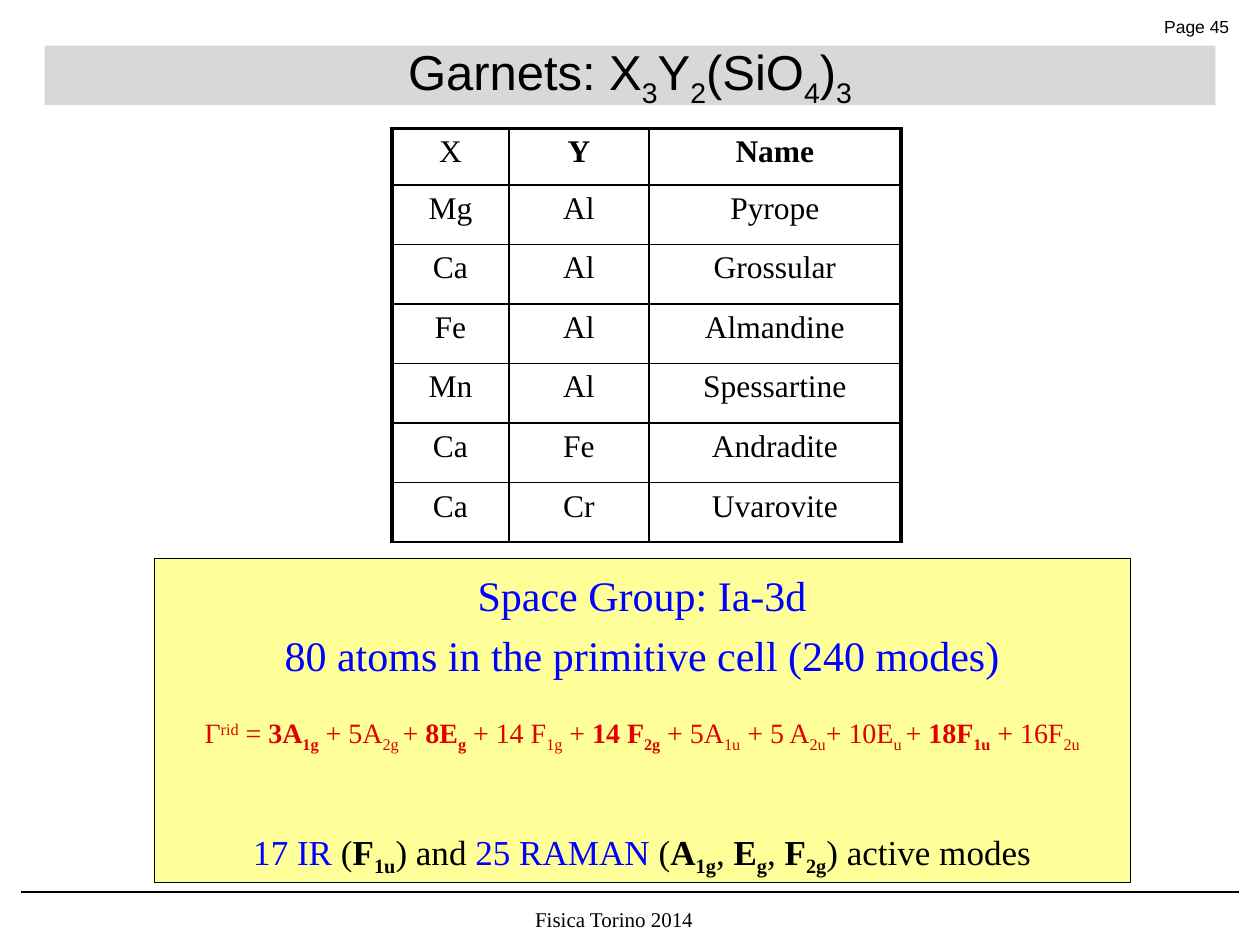
from lxml import etree
from pptx import Presentation
from pptx import util as u
from pptx.dml.color import RGBColor
from pptx.enum import shapes, text
from pptx.oxml.ns import qn

SERIF, SANS = "Times New Roman", "Arial"
BLACK, BLUE, RED = "000000", "0000FF", "E00000"
GARNETS = [
    ("X", "*Y*", "*Name*"),
    ("Mg", "Al", "Pyrope"),
    ("Ca", "Al", "Grossular"),
    ("Fe", "Al", "Almandine"),
    ("Mn", "Al", "Spessartine"),
    ("Ca", "Fe", "Andradite"),
    ("Ca", "Cr", "Uvarovite"),
]
MODES = (
    "Γ^rid^ = *3A_1g_* + 5A_2g _+ *8E_g_* + 14 F_1g_ + *14 F_2g_* + 5A_1u_"
    " + 5 A_2u_+ 10E_u _+ *18F_1u_* + 16F_2u_"
)
ACTIVE = [
    ("17 IR", BLUE),
    (" (*F_1u_*) and ", BLACK),
    ("25 RAMAN", BLUE),
    (" (*A_1g_*, *E_g_*,* F_2g_*) active modes", BLACK),
]


def rgb(value):
    return RGBColor.from_string(value)


def add_spans(para, content, size, font, color):
    """Write text in which * toggles bold, _ subscript and ^ superscript."""
    on = {"*": False, "_": False, "^": False}
    chunk = ""
    for char in content + "\0":
        if char not in on and char != "\0":
            chunk += char
            continue
        if chunk:
            span = para.add_run()
            span.text = chunk
            span.font.size = u.Pt(size)
            span.font.name = font
            span.font.bold = on["*"]
            span.font.color.rgb = rgb(color)
            if on["_"] or on["^"]:
                baseline = "-25000" if on["_"] else "30000"
                span.font._element.set("baseline", baseline)
            chunk = ""
        if char in on:
            on[char] = not on[char]


def write(frame, content, size=18, font=SERIF, color=BLACK, before=0,
          align=text.PP_ALIGN.CENTER):
    """Add a paragraph; content is marked text or a list of (text, colour)."""
    first = frame.paragraphs[0]
    para = frame.add_paragraph() if first.runs else first
    para.alignment = align
    para.space_before = u.Pt(before)
    parts = [(content, color)] if isinstance(content, str) else content
    for part, part_color in parts:
        add_spans(para, part, size, font, part_color)


def add_label(page, left, top, width, height, content, **style):
    box = page.shapes.add_textbox(*map(u.Cm, (left, top, width, height)))
    box.text_frame.word_wrap = True
    write(box.text_frame, content, **style)


def add_panel(page, left, top, width, height, fill, line=None, alpha=None):
    box = page.shapes.add_shape(
        shapes.MSO_SHAPE.RECTANGLE, *map(u.Cm, (left, top, width, height)))
    box.shadow.inherit = False
    box.fill.solid()
    box.fill.fore_color.rgb = rgb(fill)
    if alpha:
        color = box._element.spPr.find(".//" + qn("a:srgbClr"))
        etree.SubElement(color, qn("a:alpha")).set("val", str(alpha * 1000))
    if line:
        box.line.color.rgb = rgb(line)
        box.line.width = u.Pt(0.25)
    else:
        box.line.fill.background()
    box.text_frame.word_wrap = True
    return box


def add_rule(page, left, right, height):
    rule = page.shapes.add_connector(
        shapes.MSO_CONNECTOR.STRAIGHT, *map(u.Cm, (left, height, right, height)))
    rule.line.color.rgb = rgb(BLACK)
    rule.line.width = u.Pt(0.75)
    etree.SubElement(rule._element.spPr, qn("a:effectLst"))


def set_borders(cell, widths):
    """Draw the left, right, top and bottom borders, in points."""
    props = cell._tc.get_or_add_tcPr()
    for index, (side, width) in enumerate(zip("LRTB", widths)):
        line = etree.Element(qn("a:ln" + side), w=str(u.Pt(width)))
        fill = etree.SubElement(line, qn("a:solidFill"))
        etree.SubElement(fill, qn("a:srgbClr"), val=BLACK)
        props.insert(index, line)


def add_grid(page, left, top, columns, heights, rows):
    frame = page.shapes.add_table(
        len(rows), len(columns),
        *map(u.Cm, (left, top, sum(columns), sum(heights))))
    table = frame.table
    table.first_row = table.horz_banding = False
    for column, width in zip(table.columns, columns):
        column.width = u.Cm(width)
    last = len(columns) - 1
    for r, values in enumerate(rows):
        table.rows[r].height = u.Cm(heights[r])
        for c, value in enumerate(values):
            cell = table.cell(r, c)
            cell.fill.background()
            write(cell.text_frame, value)
            # Heavy outer frame, open at the bottom
            outer = (c == 0, c == last, r == 0, False)
            set_borders(cell, [2.25 if edge else 1 for edge in outer])


def main():
    deck = Presentation()
    deck.slide_width, deck.slide_height = u.Cm(25.4), u.Cm(19.05)
    page = deck.slides.add_slide(deck.slide_layouts[6])

    # Footer and page number
    add_label(page, 6.98, 18.16, 10.8, 0.76, "Fisica Torino 2014", size=12)
    add_label(page, 23.22, 0.2, 2.11, 0.69, "Page 45", size=10, font=SANS,
              align=text.PP_ALIGN.LEFT)
    add_rule(page, 0.43, 24.97, 17.98)

    # Title band
    title = add_panel(page, 0.9, 0.92, 23.6, 1.2, "B2B2B2", alpha=50)
    title.text_frame.vertical_anchor = text.MSO_ANCHOR.MIDDLE
    write(title.text_frame, "Garnets: X_3_Y_2_(SiO_4_)_3_", size=28, font=SANS)

    # Symmetry and vibrational modes
    panel = add_panel(page, 3.1, 11.25, 19.69, 6.53, "FFFF99", line=BLACK)
    frame = panel.text_frame
    frame.vertical_anchor = text.MSO_ANCHOR.TOP
    frame.margin_top = u.Cm(0.23)
    write(frame, "Space Group: Ia-3d", size=24, color=BLUE)
    write(frame, "80 atoms in the primitive cell (240 modes)", size=24,
          color=BLUE, before=5.5)
    write(frame, MODES, size=16, color=RED, before=20.5)
    write(frame, ACTIVE, size=20, before=43.5)

    # Garnet family
    add_grid(page, 7.9, 2.59, [2.36, 2.82, 5.08], [1.14] + [1.2] * 6, GARNETS)

    deck.save("out.pptx")


if __name__ == "__main__":
    main()
